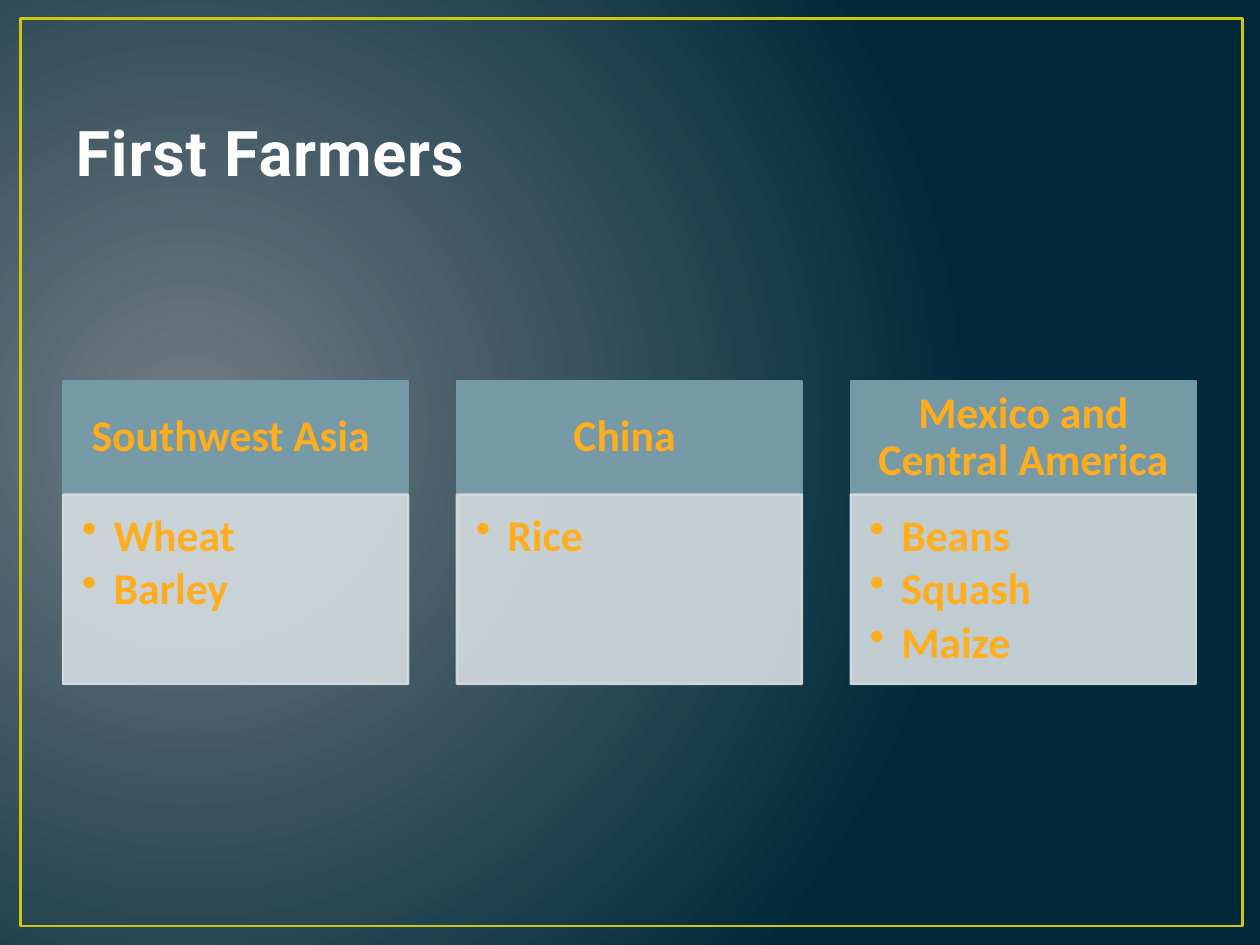
import pptx
import pptx.util
import pptx.dml.color
import pptx.enum.shapes
import pptx.enum.text
import pptx.oxml.ns
from lxml import etree
from pptx.util import Cm, Pt

qn = pptx.oxml.ns.qn
PP_ALIGN = pptx.enum.text.PP_ALIGN
MSO_ANCHOR = pptx.enum.text.MSO_ANCHOR


def rgb(value):
    return pptx.dml.color.RGBColor.from_string(value)


class FarmerSlide:
    """Holds the style and the slide, and adds each kind of element."""

    text_color = "FFAD1C"
    header_color = "759AA5"
    body_color = "D6DEE1"
    frame_color = "CFC60D"
    text_size = 25

    def __init__(self, prs):
        self.s = prs.slides.add_slide(prs.slide_layouts[5])

    def background(self, inner, outer):
        fill = self.s.background.fill
        fill.gradient()
        for stop, color, position in zip(fill.gradient_stops, (inner, outer), (0, 1)):
            stop.color.rgb = rgb(color)
            stop.position = position
        grad = self.s.element.find(".//" + qn("a:gradFill"))
        circle = etree.Element(qn("a:path"), {"path": "circle"})
        etree.SubElement(circle, qn("a:fillToRect"), l="15000", t="50000", r="85000", b="60000")
        grad.replace(grad.find(qn("a:lin")), circle)

    def title(self, text):
        sp = self.s.shapes.title
        sp.left, sp.top, sp.width, sp.height = Cm(1.27), Cm(0.76), Cm(22.86), Cm(3.18)
        tf = sp.text_frame
        tf.text = text
        tf.vertical_anchor = MSO_ANCHOR.BOTTOM
        p = tf.paragraphs[0]
        p.alignment = PP_ALIGN.LEFT
        r = p.runs[0]
        self.font(r, "Roboto", 36, "FEFEFE")
        r.font._element.set("spc", "50")

    def font(self, r, name, size, color):
        r.font.name = name
        r.font.size = Pt(size)
        r.font.bold = True
        r.font.color.rgb = rgb(color)

    def rect(self, left, top, width, height, line, weight, fill=None, alpha=None):
        sp = self.s.shapes.add_shape(
            pptx.enum.shapes.MSO_SHAPE.RECTANGLE, Cm(left), Cm(top), Cm(width), Cm(height))
        sp.shadow.inherit = False
        sp.line.color.rgb = rgb(line)
        sp.line.width = Pt(weight)
        if fill:
            sp.fill.solid()
            sp.fill.fore_color.rgb = rgb(fill)
        else:
            sp.fill.background()
        if alpha:
            for color in sp.element.spPr.iter(qn("a:srgbClr")):
                etree.SubElement(color, qn("a:alpha"), val=str(alpha * 1000))
        return sp

    def frame(self):
        self.rect(0.41, 0.38, 24.64, 18.29, self.frame_color, 1.5)

    def label(self, sp, text, insets, anchor, align, after):
        tf = sp.text_frame
        tf.text = text
        tf.word_wrap = True
        tf.vertical_anchor = anchor
        tf.margin_left, tf.margin_top, tf.margin_right, tf.margin_bottom = map(Cm, insets)
        for p in tf.paragraphs:
            p.alignment = align
            p.line_spacing = 0.9
            p.space_after = Pt(after)
            self.font(p.runs[0], "Calibri", self.text_size, self.text_color)
        return tf

    def header(self, left, top, width, height, text):
        sp = self.rect(left, top, width, height, self.header_color, 1.25, self.header_color)
        self.label(sp, text, (0.48, 0.28, 0.48, 0.28), MSO_ANCHOR.MIDDLE, PP_ALIGN.CENTER, 8.75)

    def bullets(self, left, top, width, height, items):
        sp = self.rect(left, top, width, height, self.body_color, 1.25, self.body_color, 90)
        tf = self.label(sp, "\n".join(items), (0.38, 0.38, 0.48, 0.56),
                        MSO_ANCHOR.TOP, PP_ALIGN.LEFT, 3.75)
        for p in tf.paragraphs:
            p.level = 1
            pPr = p._p.get_or_add_pPr()
            pPr.set("marL", str(Cm(0.64)))
            pPr.set("indent", str(-Cm(0.64)))
            etree.SubElement(pPr, qn("a:buChar"), char="•")


def main():
    prs = pptx.Presentation()
    prs.slide_width, prs.slide_height = Cm(25.4), Cm(19.05)
    slide = FarmerSlide(prs)
    slide.background("717C84", "01293A")
    slide.frame()
    slide.title("First Farmers")
    regions = [
        ("Southwest Asia ", ["Wheat", "Barley"]),
        ("China ", ["Rice"]),
        ("Mexico and Central America", ["Beans", "Squash", "Maize"]),
    ]
    left, step, width = 1.27, 7.94, 6.96
    top, header_height, body_height = 7.68, 2.29, 3.82
    for i, (region, crops) in enumerate(regions):
        x = left + i * step
        slide.header(x, top, width, header_height, region)
        slide.bullets(x, top + header_height, width, body_height, crops)
    prs.save("out.pptx")


if __name__ == "__main__":
    main()
